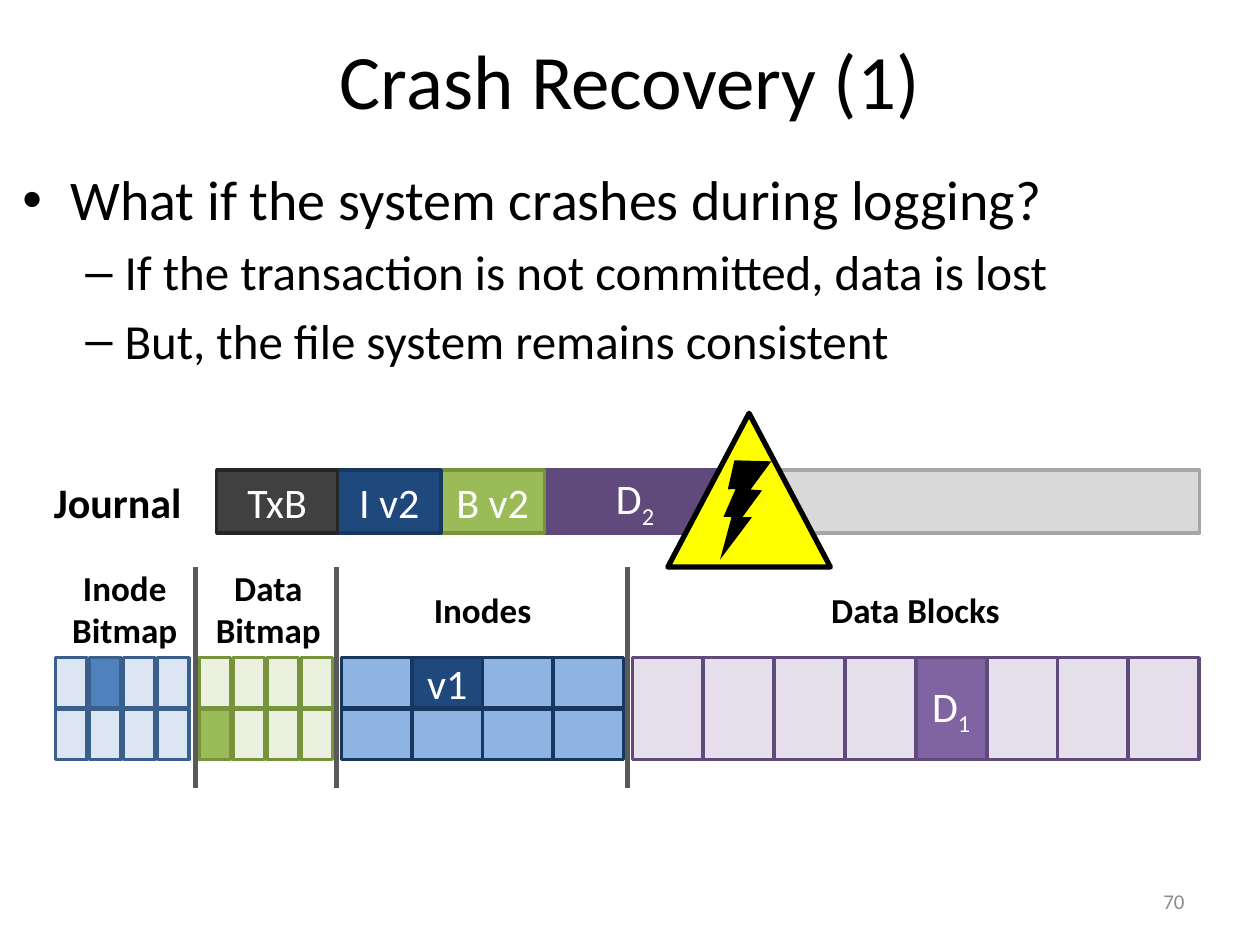
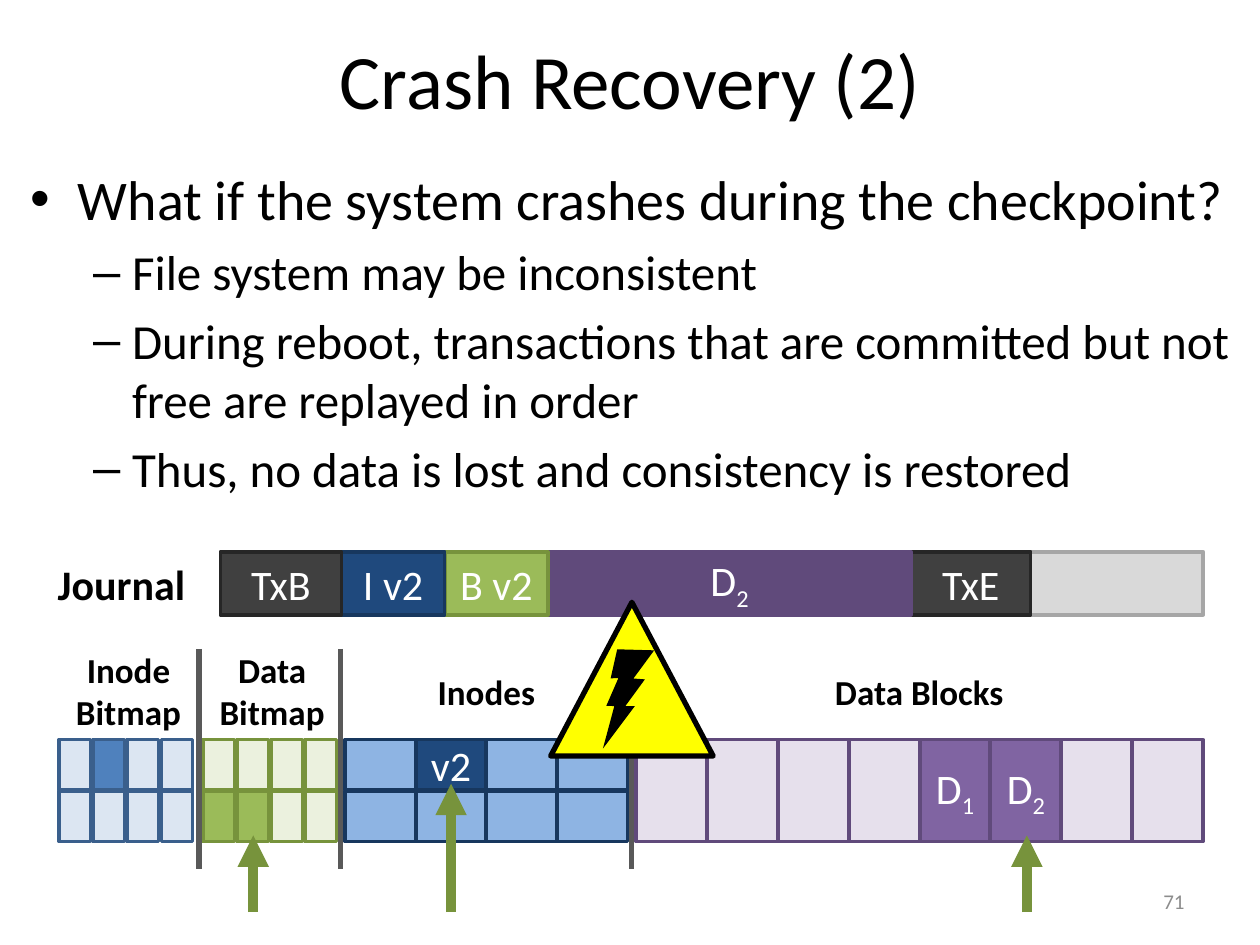
from pptx import Presentation
from pptx.dml.color import RGBColor
from pptx.enum.shapes import MSO_CONNECTOR, MSO_SHAPE
from pptx.enum.text import MSO_ANCHOR, PP_ALIGN
from pptx.oxml.ns import qn
from pptx.util import Cm, Pt
from lxml import etree

RECT, TRI, BOLT = MSO_SHAPE.RECTANGLE, MSO_SHAPE.ISOSCELES_TRIANGLE, MSO_SHAPE.LIGHTNING_BOLT
STRAIGHT = MSO_CONNECTOR.STRAIGHT
LEFT, MID, RIGHT = PP_ALIGN.LEFT, PP_ALIGN.CENTER, PP_ALIGN.RIGHT
TOP, CENTER = MSO_ANCHOR.TOP, MSO_ANCHOR.MIDDLE

FONT = "Calibri"
BLACK, WHITE, GRAY, RULE = "000000", "FFFFFF", "8C8C8C", "595959"
YELLOW, ARROW = "FFFF00", "77933C"

# Journal blocks: fill, edge
DARK = ("404040", "262626")
NAVY = ("1F497D", "17375E")
GREEN = ("9BBB59", "77933C")
PURPLE = ("604A7B", "604A7B")
FREE = ("D9D9D9", "A6A6A6")

# Disk areas: left, columns, rows, pitch, cell width, cell height, pale, used, edge
AREAS = {
    "inode map": (0.44, 4, 2, 0.27, 0.25, 0.4, "DCE6F2", "4F81BD", "3A5F8C"),
    "data map": (1.58, 4, 2, 0.27, 0.25, 0.4, "EBF1DE", "9BBB59", "77933C"),
    "inodes": (2.71, 4, 2, 0.56, 0.56, 0.4, "8EB4E3", "1F497D", "17375E"),
    "blocks": (5.02, 8, 1, 0.5625, 0.56, 0.81, "E6E0EC", "8064A2", "604A7B"),
}
ROW = 0.41
# Area names: text, left, top, width, height
NAMES = [
    ("Inode\nBitmap", 0.47, 4.45, 1.04, 0.77),
    ("Data\nBitmap", 1.61, 4.45, 1.04, 0.77),
    ("Inodes", 3.34, 4.62, 0.98, 0.44),
    ("Data Blocks", 6.49, 4.62, 1.55, 0.44),
]


def inch(val):
    return Cm(val * 2.54)


def hue(code):
    return RGBColor.from_string(code)


def write(frame, text, size=24, color=WHITE, bold=False, align=MID,
          anchor=CENTER, wrap=True, inset=0.0):
    """Write one paragraph per line; an underscore lowers what follows it."""
    frame.word_wrap, frame.vertical_anchor = wrap, anchor
    frame.margin_left = frame.margin_right = inch(inset)
    frame.margin_top = frame.margin_bottom = inch(inset / 2)
    for i, line in enumerate(text.split("\n")):
        para = frame.add_paragraph() if i else frame.paragraphs[0]
        para.alignment = align
        for low, part in enumerate(line.split("_")):
            run = para.add_run()
            run.text = part
            font = run.font
            font.name, font.size, font.bold = FONT, Pt(size), bold
            font.color.rgb = hue(color)
            if low:
                run._r.get_or_add_rPr().set("baseline", "-25000")


class Deck:
    def __init__(self):
        self.prs = Presentation()
        self.prs.slide_width, self.prs.slide_height = inch(10), inch(7.5)

    def page(self, title, num):
        self.slide = self.prs.slides.add_slide(self.prs.slide_layouts[6])
        self.dx = self.dy = 0
        self.text(title, 0.5, 0, 9, 1.25, size=44, inset=0.1)
        self.text(num, 7.17, 6.95, 2.33, 0.4, size=12, color=GRAY,
                  align=RIGHT, inset=0.1)

    def shift(self, dx, dy):
        self.dx, self.dy = dx, dy

    def spot(self, x, y):
        return inch(x + self.dx), inch(y + self.dy)

    def text(self, text, x, y, w, h, color=BLACK, **style):
        box = self.slide.shapes.add_textbox(*self.spot(x, y), inch(w), inch(h))
        write(box.text_frame, text, color=color, **style)
        return box

    def label(self, text, x, y, w, h, **style):
        self.text(text, x, y, w, h, bold=True, anchor=TOP, wrap=False,
                  inset=0.1, **style)

    def bullets(self, x, w, h, head, *points):
        box = self.text("\n".join((head,) + points), x, 1.26, w, h, size=28,
                        align=LEFT, anchor=TOP, inset=0.1)
        for i, para in enumerate(box.text_frame.paragraphs):
            left, hang, mark = (0.81, 0.31, "–") if i else (0.38, 0.38, "•")
            if not i:
                para.runs[0].font.size = Pt(32)
            props = para._p.get_or_add_pPr()
            props.set("marL", str(inch(left)))
            props.set("indent", str(-inch(hang)))
            gap = etree.SubElement(props, qn("a:spcBef"))
            etree.SubElement(gap, qn("a:spcPct")).set("val", "20000")
            etree.SubElement(props, qn("a:buFont")).set("typeface", "Arial")
            etree.SubElement(props, qn("a:buChar")).set("char", mark)

    def shape(self, kind, x, y, w, h, fill, edge=None, width=2, text=""):
        item = self.slide.shapes.add_shape(kind, *self.spot(x, y), inch(w), inch(h))
        item.shadow.inherit = False
        item.fill.solid()
        item.fill.fore_color.rgb = hue(fill)
        if edge:
            item.line.color.rgb = hue(edge)
            item.line.width = Pt(width)
        else:
            item.line.fill.background()
        if text:
            write(item.text_frame, text)
        return item

    def line(self, x1, y1, x2, y2, color, width, arrow=False):
        item = self.slide.shapes.add_connector(
            STRAIGHT, *self.spot(x1, y1), *self.spot(x2, y2))
        item.line.color.rgb = hue(color)
        item.line.width = Pt(width)
        if arrow:
            etree.SubElement(item.line._get_or_add_ln(), qn("a:tailEnd")).set(
                "type", "triangle")
        etree.SubElement(item._element.spPr, qn("a:effectLst"))

    def journal(self, *blocks):
        self.shape(RECT, 1.72, 3.73, 7.8, 0.5, *FREE)
        self.label("Journal", 0.33, 3.73, 1.22, 0.5, align=LEFT)
        # Later blocks lie under earlier ones, so place them from the right
        ends = [1.72]
        for _, wide, _ in blocks:
            ends.append(ends[-1] + wide)
        rows = list(zip(ends, blocks))
        for x, (text, wide, tone) in reversed(rows):
            self.shape(RECT, x, 3.73, wide, 0.5, *tone, text=text)

    def disk(self, used):
        """Draw every area; used maps an area to its filled cells and texts."""
        for key, (left, cols, rows, step, w, h, pale, full, edge) in AREAS.items():
            for i in range(cols * rows):
                row, col = divmod(i, cols)
                fill = full if i in used[key] else pale
                self.shape(RECT, left + col * step, 5.22 + row * ROW, w, h,
                           fill, edge, text=used[key].get(i, ""))
        for name in NAMES:
            self.label(*name, size=20)
        for x in (1.55, 2.67, 4.98):
            self.line(x, 4.5, x, 6.25, RULE, 3)

    def crash(self, x, y):
        self.shape(TRI, x, y, 1.29, 1.22, YELLOW, BLACK, 3)
        bolt = self.shape(BOLT, x + 0.255, y + 0.375, 0.68, 0.68, BLACK)
        bolt.rotation = 336.9
        bolt._element.spPr.find(qn("a:xfrm")).set("flipH", "1")


def main():
    deck = Deck()
    start = [("TxB", 0.96, DARK), ("I v2", 0.82, NAVY), ("B v2", 0.82, GREEN)]

    # Crash while logging
    deck.page("Crash Recovery (1)", "70")
    deck.bullets(0.08, 9.85, 1.99,
                 "What if the system crashes during logging?",
                 "If the transaction is not committed, data is lost",
                 "But, the file system remains consistent")
    deck.journal(*start, ("D_2", 1.44, PURPLE))
    deck.disk({"inode map": {1: ""}, "data map": {4: ""},
               "inodes": {1: "v1"}, "blocks": {4: "D_1"}})
    deck.crash(5.3, 3.28)

    # Crash during the checkpoint
    deck.page("Crash Recovery (2)", "71")
    deck.bullets(0.14, 9.76, 5.66,
                 "What if the system crashes during the checkpoint?",
                 "File system may be inconsistent",
                 "During reboot, transactions that are committed but not "
                 "free are replayed in order",
                 "Thus, no data is lost and consistency is restored")
    deck.shift(0.03, 0.65)
    deck.journal(*start, ("D_2", 2.88, PURPLE), ("TxE", 0.95, DARK))
    deck.disk({"inode map": {1: ""}, "data map": {4: "", 5: ""},
               "inodes": {1: "v2"}, "blocks": {4: "D_1", 5: "D_2"}})
    deck.shift(0, 0)
    for x, tip in ((3.58, 6.22), (2.01, 6.63), (8.15, 6.63)):
        deck.line(x, 7.24, x, tip, ARROW, 6, arrow=True)
    deck.crash(4.37, 4.78)

    deck.prs.save("out.pptx")


if __name__ == "__main__":
    main()
